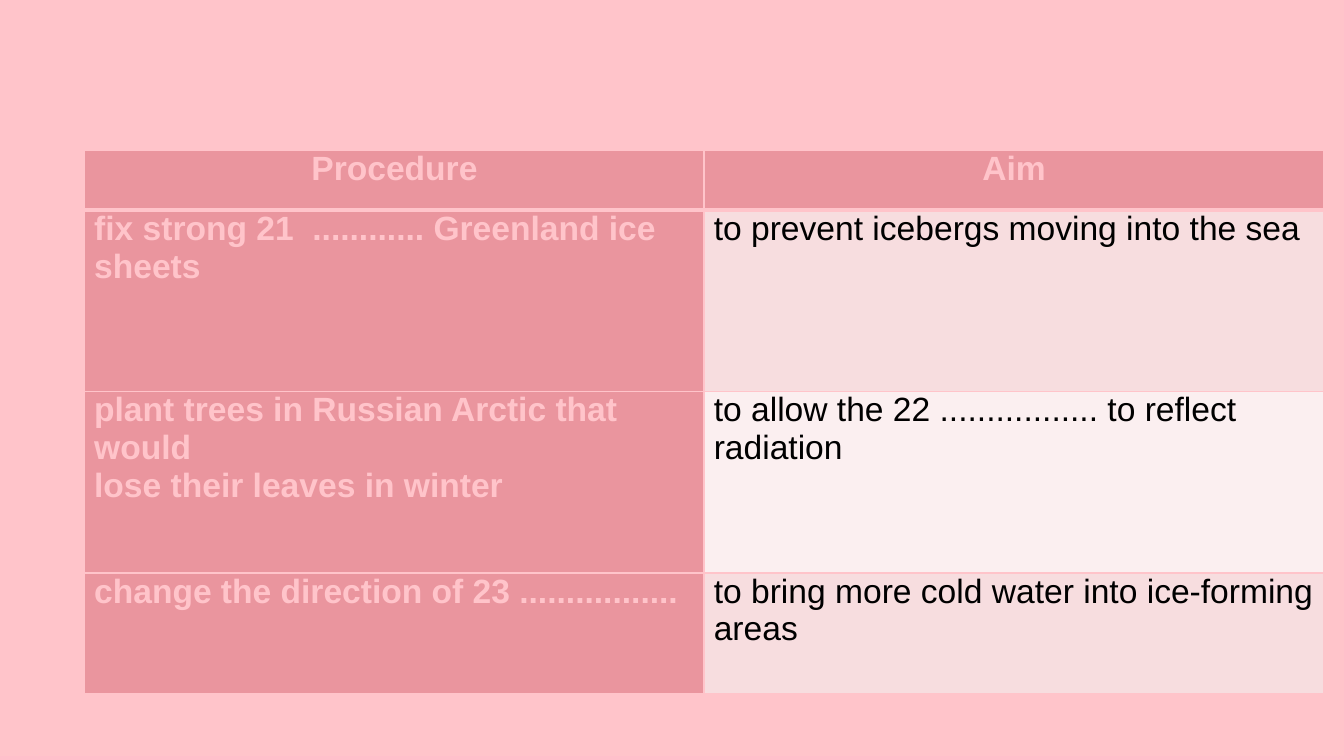
from lxml.etree import SubElement
from pptx import Presentation
from pptx.dml.color import RGBColor
from pptx.enum.text import PP_ALIGN
from pptx.oxml.ns import qn
from pptx.util import Cm, Pt

PINK = RGBColor(0xFF, 0xC4, 0xCA)
ROSE = RGBColor(0xEA, 0x95, 0x9E)
BLUSH = RGBColor(0xF7, 0xDD, 0xDF)
PALE = RGBColor(0xFB, 0xEF, 0xF0)
BLACK = RGBColor(0, 0, 0)

HEADINGS = ("Procedure", "Aim")
MEASURES = (
    ("fix strong 21  ............ Greenland ice\nsheets",
     "to prevent icebergs moving into the sea"),
    ("plant trees in Russian Arctic that would\nlose their leaves in winter",
     "to allow the 22 ................. to reflect radiation"),
    ("change the direction of 23 .................",
     "to bring more cold water into ice-forming areas"),
)
ROW_HEIGHTS = (1.14, 3.43, 3.43, 2.29)
COLUMN_WIDTH = 11.71


class SlideBuilder:
    """Holds the text style and the current slide."""

    font_name = "Arial"
    font_size = Pt(18)

    def __init__(self, slide):
        self.slide = slide

    def background(self, color):
        fill = self.slide.background.fill
        fill.solid()
        fill.fore_color.rgb = color

    def border(self, cell, side, width):
        line = SubElement(cell._tc.get_or_add_tcPr(), qn(f"a:ln{side}"), w=str(Pt(width)))
        SubElement(SubElement(line, qn("a:solidFill")), qn("a:srgbClr"), val=str(PINK))

    def cell(self, cell, text, fill, color, bold, align, top=1, bottom=1):
        for side, width in (("L", 1), ("R", 1), ("T", top), ("B", bottom)):
            self.border(cell, side, width)
        cell.fill.solid()
        cell.fill.fore_color.rgb = fill
        cell.margin_left = cell.margin_right = Cm(0.18)
        cell.margin_top = cell.margin_bottom = 0
        cell.text_frame.text = text
        for paragraph in cell.text_frame.paragraphs:
            paragraph.alignment = align
            for run in paragraph.runs:
                run.font.name = self.font_name
                run.font.size = self.font_size
                run.font.bold = bold
                run.font.color.rgb = color

    def table(self, left, top, headings, measures):
        columns = len(headings)
        table = self.slide.shapes.add_table(
            len(ROW_HEIGHTS), columns, Cm(left), Cm(top),
            Cm(COLUMN_WIDTH * columns), Cm(sum(ROW_HEIGHTS))).table
        for column in table.columns:
            column.width = Cm(COLUMN_WIDTH)
        for row, height in zip(table.rows, ROW_HEIGHTS):
            row.height = Cm(height)
        for index, heading in enumerate(headings):
            self.cell(table.cell(0, index), heading, ROSE, PINK, True, PP_ALIGN.CENTER, bottom=3)
        for index, (procedure, aim) in enumerate(measures, start=1):
            rule = 3 if index == 1 else 1
            band = BLUSH if index % 2 else PALE
            self.cell(table.cell(index, 0), procedure, ROSE, PINK, True, PP_ALIGN.LEFT, top=rule)
            self.cell(table.cell(index, 1), aim, band, BLACK, False, PP_ALIGN.LEFT, top=rule)


def main():
    presentation = Presentation()
    presentation.slide_width = Cm(25.4)
    presentation.slide_height = Cm(14.29)
    builder = SlideBuilder(presentation.slides.add_slide(presentation.slide_layouts[6]))
    builder.background(PINK)
    builder.table(1.6, 2.83, HEADINGS, MEASURES)
    presentation.save("out.pptx")


if __name__ == "__main__":
    main()
